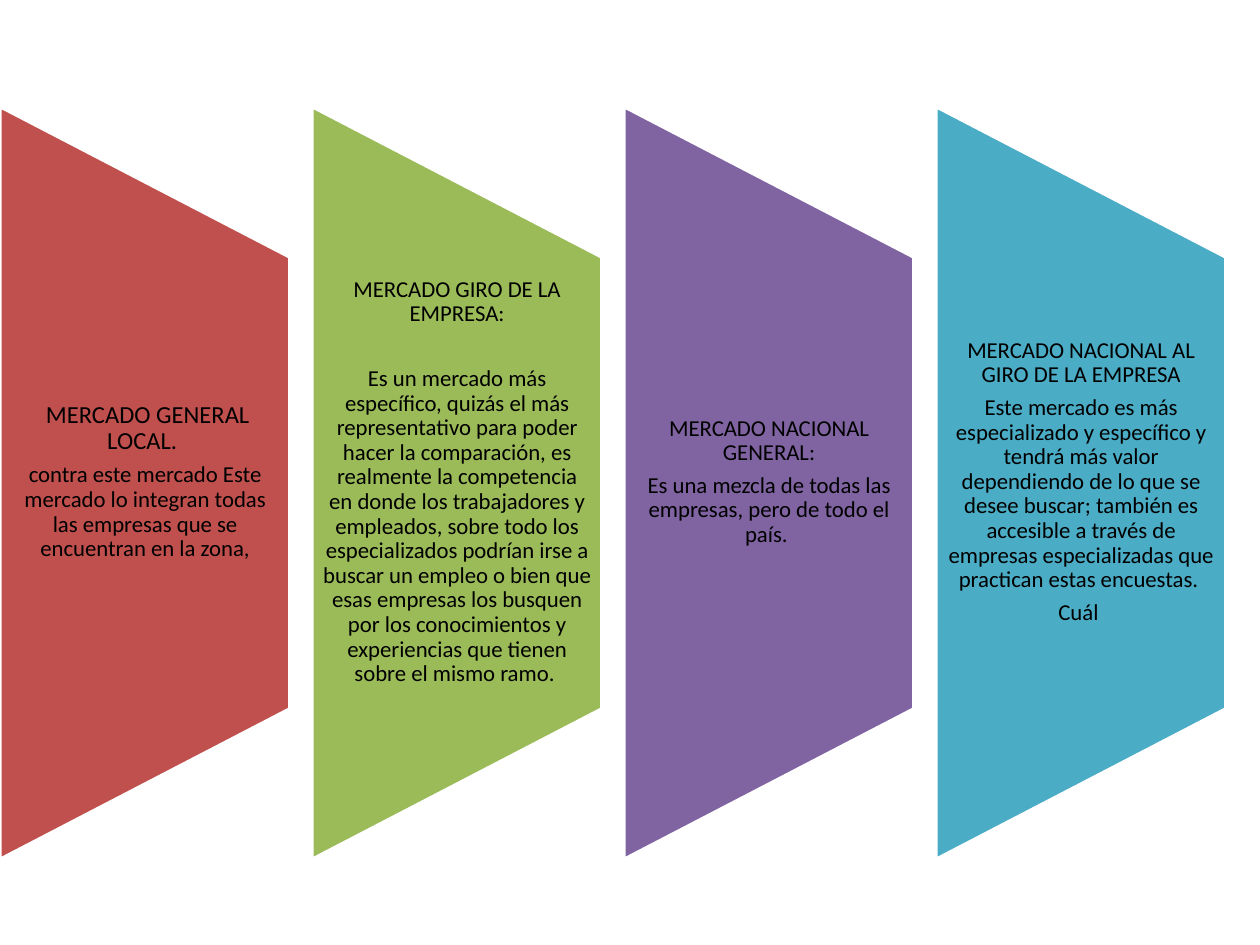
from dataclasses import dataclass

from pptx import Presentation
from pptx.dml.color import RGBColor
from pptx.enum.shapes import MSO_SHAPE
from pptx.enum.text import MSO_ANCHOR, PP_ALIGN
from pptx.util import Emu, Pt

FLAP = MSO_SHAPE.FLOWCHART_MANUAL_OPERATION
MIDDLE = MSO_ANCHOR.MIDDLE
CENTER = PP_ALIGN.CENTER

SCALE = 914400 / 126
COLORS = {
    "red": "C0504D",
    "green": "9BBB59",
    "purple": "8064A2",
    "blue": "4BACC6",
    "white": "FFFFFF",
    "black": "000000",
}

# Panel grid, in px
STEP, WIDE, TALL, MID = 312, 290, 753, 483
TEXT_TOP, TEXT_TALL, INSET = 256, 452, 11


@dataclass
class Panel:
    color: str
    head: str
    body: tuple[str, ...]
    size: int = 13
    gap: float = 4.55  # points between head and body


PANELS = [
    Panel("red", " MERCADO GENERAL LOCAL. ",
          ("contra este mercado Este mercado lo integran todas las empresas "
           "que se encuentran en la zona,",), size=14),
    Panel("green", "MERCADO GIRO DE LA EMPRESA:",
          ("Es un mercado más específico, quizás el más representativo para "
           "poder hacer la comparación, es realmente la competencia en donde "
           "los trabajadores y empleados, sobre todo los especializados "
           "podrían irse a buscar un empleo o bien que esas empresas los "
           "busquen por los conocimientos y experiencias que tienen sobre el "
           "mismo ramo. ",), gap=23),
    Panel("purple", "MERCADO NACIONAL GENERAL:",
          ("Es una mezcla de todas las empresas, pero de todo el país. ",)),
    Panel("blue", "MERCADO NACIONAL AL GIRO DE LA EMPRESA",
          ("Este mercado es más especializado y específico y tendrá más valor "
           "dependiendo de lo que se desee buscar; también es accesible a "
           "través de empresas especializadas que practican estas encuestas. ",
           "Cuál ")),
]


def px(n: float) -> Emu:
    return Emu(round(n * SCALE))


def rgb(name: str) -> RGBColor:
    return RGBColor.from_string(COLORS[name])


def write(para, text: str, *, size: int = 13, after: float = 4.55,
          color: str = "black", font: str = "Calibri") -> None:
    para.alignment = CENTER
    para.line_spacing = 0.9
    para.space_after = Pt(after)
    run = para.add_run()
    run.text = text
    run.font.size = Pt(size)
    run.font.name = font
    run.font.color.rgb = rgb(color)


def draw_flap(slide, left: int, color: str) -> None:
    # Turned a quarter, so its length becomes the panel's height
    flap = slide.shapes.add_shape(
        FLAP, px(left + (WIDE - TALL) / 2), px(MID - WIDE / 2),
        px(TALL), px(WIDE))
    flap.rotation = 270
    flap.shadow.inherit = False
    flap.fill.solid()
    flap.fill.fore_color.rgb = rgb(color)
    flap.line.color.rgb = rgb("white")
    flap.line.width = Pt(2)


def draw_text(slide, left: int, panel: Panel) -> None:
    box = slide.shapes.add_textbox(
        px(left), px(TEXT_TOP), px(WIDE), px(TEXT_TALL))
    frame = box.text_frame
    frame.word_wrap = True
    frame.vertical_anchor = MIDDLE
    frame.margin_left = frame.margin_right = px(INSET)
    frame.margin_top = frame.margin_bottom = 0
    write(frame.paragraphs[0], panel.head, size=panel.size, after=panel.gap)
    for text in panel.body:
        write(frame.add_paragraph(), text)


def main() -> None:
    deck = Presentation()
    deck.slide_width, deck.slide_height = px(1260), px(945)
    slide = deck.slides.add_slide(deck.slide_layouts[6])
    for i, panel in enumerate(PANELS):
        draw_flap(slide, i * STEP, panel.color)
        draw_text(slide, i * STEP, panel)
    deck.save("out.pptx")


if __name__ == "__main__":
    main()
